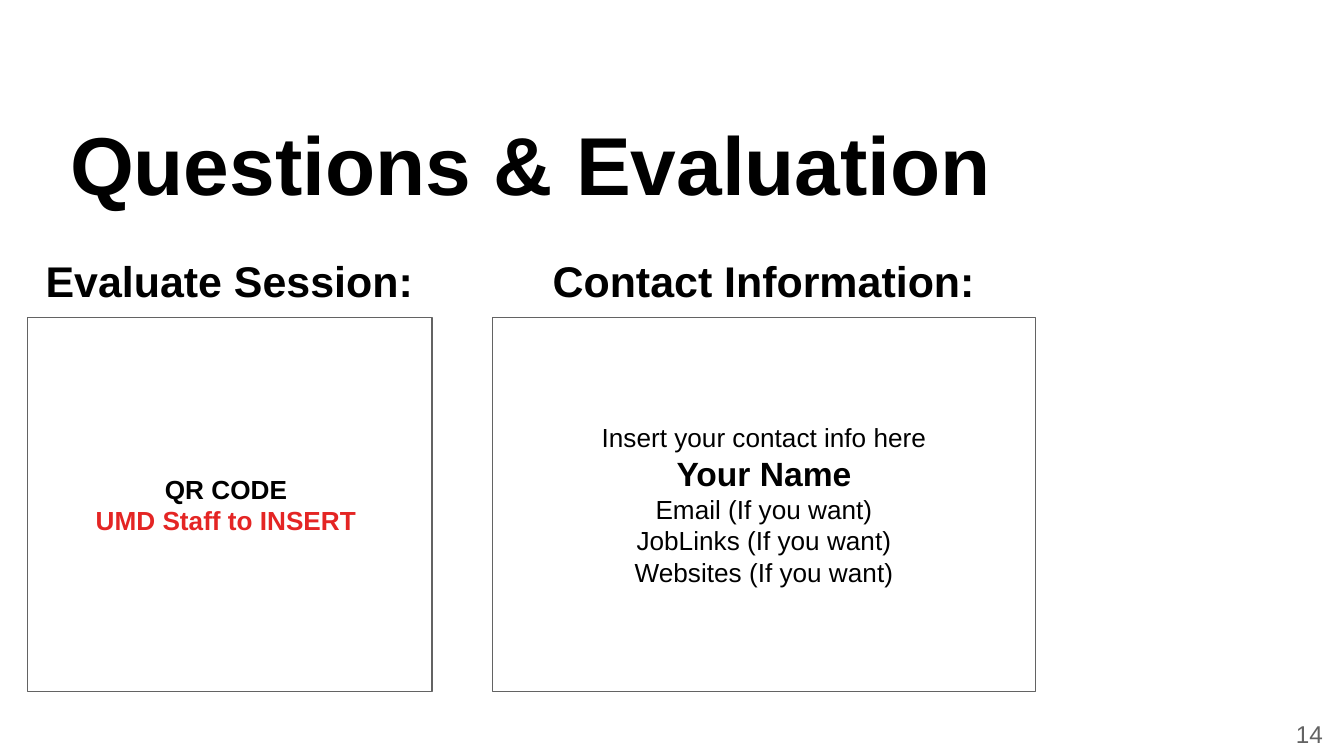
"""Build the closing slide with evaluation and contact panels."""
from dataclasses import dataclass

from pptx import Presentation
from pptx.dml.color import RGBColor
from pptx.enum.shapes import MSO_SHAPE
from pptx.enum.text import MSO_ANCHOR, PP_ALIGN
from pptx.util import Inches, Pt

RECT = MSO_SHAPE.RECTANGLE
MIDDLE, BOTTOM = MSO_ANCHOR.MIDDLE, MSO_ANCHOR.BOTTOM
CENTER, RIGHT = PP_ALIGN.CENTER, PP_ALIGN.RIGHT
WIDE = 10
HIGH = WIDE * 9 / 16
FONT, BLACK, GRAY, RED = "Arial", "000000", "636363", "E42524"
HEAD_TOP, HEAD_HIGH = 33.5, 7.12
BODY_TOP, BODY_HIGH = 42, 49.45


@dataclass
class Line:
    """One paragraph and its look, with an optional red second row."""
    text: str
    size: int = 14
    bold: bool = False
    color: str = BLACK
    alert: str = ""


@dataclass
class Panel:
    """A headed column, placed in percent of the slide width."""
    left: float
    width: float
    head: str
    lines: list[Line]


PANELS = [
    Panel(2.04, 30.1, "Evaluate Session:", [
        Line("QR CODE ", bold=True, alert="UMD Staff to INSERT "),
    ]),
    Panel(36.65, 40.4, "Contact Information:", [
        Line("Insert your contact info here"),
        Line("Your Name", 18, True),
        Line("Email (If you want)"),
        Line("JobLinks (If you want)"),
        Line("Websites (If you want)"),
    ]),
]


def paint(code: str) -> RGBColor:
    """Turn a hex string into a colour."""
    return RGBColor.from_string(code)


def area(left: float, top: float, width: float, height: float) -> list[int]:
    """Turn percents of the slide into lengths."""
    return [Inches(WIDE * left / 100), Inches(HIGH * top / 100),
            Inches(WIDE * width / 100), Inches(HIGH * height / 100)]


def write(shape, lines: list[Line], align=CENTER, anchor=MIDDLE,
          inset: float = 0.1) -> None:
    """Fill a shape with formatted paragraphs."""
    frame = shape.text_frame
    frame.word_wrap = True
    frame.vertical_anchor = anchor
    frame.margin_left = frame.margin_right = Inches(inset)
    frame.margin_top = frame.margin_bottom = Inches(inset)
    for i, line in enumerate(lines):
        para = frame.add_paragraph() if i else frame.paragraphs[0]
        para.text = line.text
        para.alignment = align
        font = para.font
        font.name, font.size, font.bold = FONT, Pt(line.size), line.bold
        font.color.rgb = paint(line.color)
        if line.alert:
            para.add_line_break()
            run = para.add_run()
            run.text = line.alert
            run.font.color.rgb = paint(RED)


def draw(slide, panel: Panel) -> None:
    """Draw a panel's box and heading."""
    box = slide.shapes.add_shape(
        RECT, *area(panel.left, BODY_TOP, panel.width, BODY_HIGH))
    box.shadow.inherit = False
    box.fill.background()
    box.line.color.rgb = paint(GRAY)
    box.line.width = Pt(0.75)
    write(box, panel.lines)
    head = slide.shapes.add_textbox(
        *area(panel.left, HEAD_TOP, panel.width, HEAD_HIGH))
    write(head, [Line(panel.head, 23, True)])


def main() -> None:
    """Build and save the slide."""
    deck = Presentation()
    deck.slide_width, deck.slide_height = Inches(WIDE), Inches(HIGH)
    slide = deck.slides.add_slide(deck.slide_layouts[5])
    title = slide.shapes.title
    title.left, title.top, title.width, title.height = area(2.04, 14.77, 75, 13.17)
    write(title, [Line("Questions & Evaluation", 44, True)],
          anchor=BOTTOM, inset=0)
    title.text_frame.paragraphs[0].line_spacing = 0.8
    for panel in PANELS:
        draw(slide, panel)
    page = slide.shapes.add_textbox(*area(93.4, 93.2, 6, 7.65))
    write(page, [Line("14", 13, color=GRAY)], align=RIGHT)
    deck.save("out.pptx")


if __name__ == "__main__":
    main()
